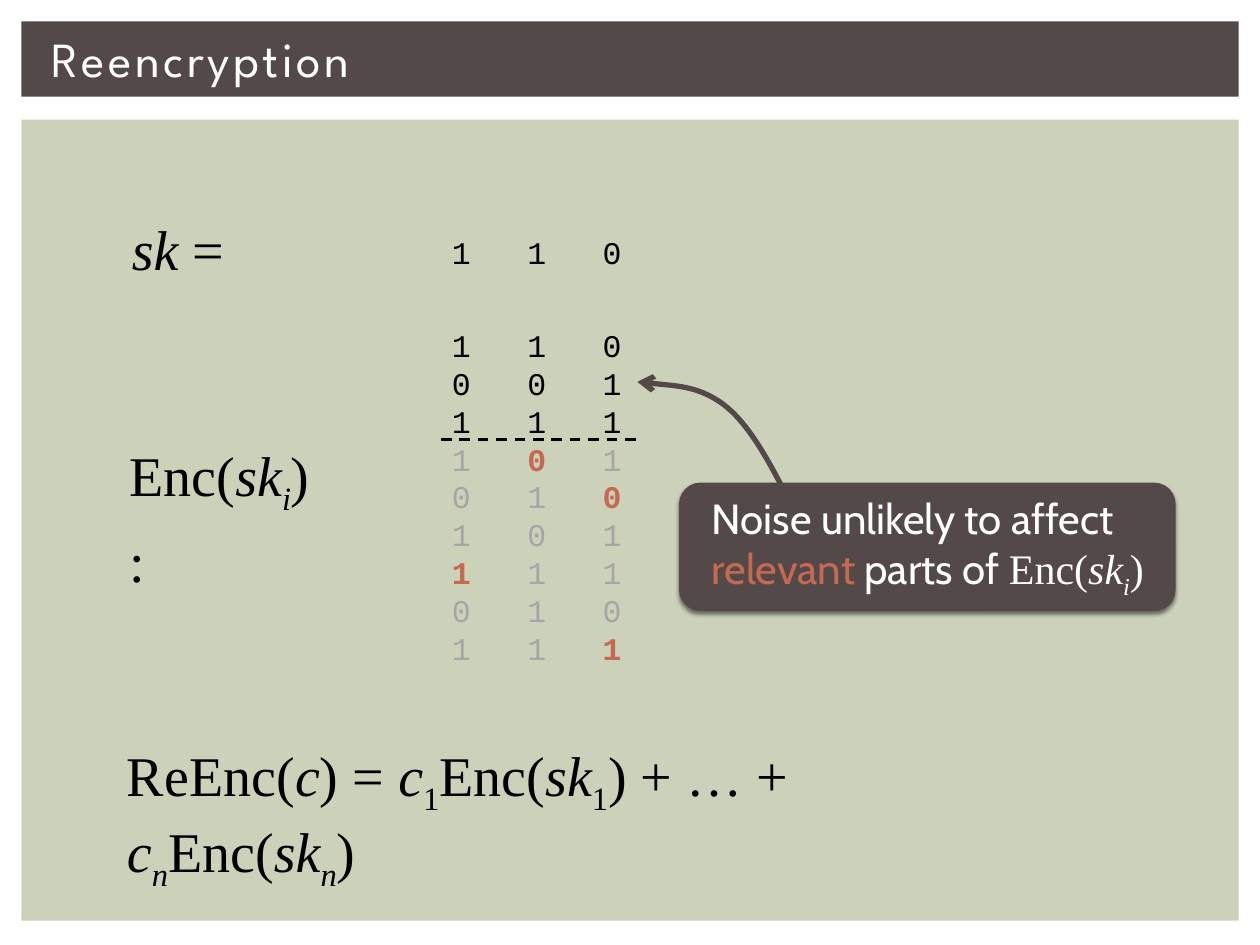
from lxml import etree
from pptx import Presentation
from pptx.dml.color import RGBColor
from pptx.enum.dml import MSO_LINE
from pptx.enum.shapes import MSO_CONNECTOR, MSO_SHAPE
from pptx.enum.text import MSO_ANCHOR
from pptx.oxml import parse_xml
from pptx.oxml.ns import nsdecls, qn
from pptx.util import Cm, Pt

RECTANGLE, ROUNDED = MSO_SHAPE.RECTANGLE, MSO_SHAPE.ROUNDED_RECTANGLE
MIDDLE, TOP = MSO_ANCHOR.MIDDLE, MSO_ANCHOR.TOP
STRAIGHT, DASH = MSO_CONNECTOR.STRAIGHT, MSO_LINE.DASH

BROWN, SAGE, RUST = "534949", "CCD1B9", "C66951"
BLACK, WHITE, GRAY = "000000", "FFFFFF", "A6A6A6"

# Text formats
TITLE = {"name": "League Spartan", "size": Pt(28), "color": WHITE}
MATH = {"name": "Times New Roman", "size": Pt(32), "color": BLACK}
BITS = {"name": "Courier New", "size": Pt(18), "color": BLACK}
NOTE = {"name": "Cabin", "size": Pt(24), "color": WHITE}
NOTE_MATH = {"name": "Times New Roman"}
ITALIC = {"italic": True}
SUB = {"baseline": -25000}
ITALIC_SUB = ITALIC | SUB
RELEVANT = {"color": RUST, "bold": True}

# Content: a paragraph is a list of (text, format) spans
SECRET_KEY = [("sk ", ITALIC), ("=", {})]
ENCRYPTED_KEY = [("Enc(", {}), ("sk", ITALIC), ("i", ITALIC_SUB), ("):", {})]
REENCRYPTION = [
    ("ReEnc(", {}), ("c", ITALIC), (") = ", {}),
    ("c", ITALIC), ("1", SUB), ("Enc(", {}), ("sk", ITALIC), ("1", SUB),
    (") + … + ", {}),
    ("c", ITALIC), ("n", ITALIC_SUB), ("Enc(", {}), ("sk", ITALIC),
    ("n", ITALIC_SUB), (")", {}),
]
NOTE_LINES = [
    [("Noise unlikely to affect", {})],
    [("relevant", {"color": RUST}), (" parts of ", {}), ("Enc(", NOTE_MATH),
     ("sk", NOTE_MATH | ITALIC), ("i", NOTE_MATH | ITALIC_SUB), (")", NOTE_MATH)],
]
KEY_BITS = ["1 1 0"]
# A star marks a relevant bit
CLEAR_ROWS = ["1 1 0", "0 0 1", "1 1 1"]
NOISY_ROWS = ["1 0* 1", "0 1 0*", "1 0 1", "1* 1 1", "0 1 0", "1 1 1*"]

BIT_STEP = 1.52
MATH_PITCH, BIT_PITCH = Pt(43.6), Pt(21.6)
# Start point, then control and end points of two cubic curves
ARROW = [(15.8, 9.88), (15.44, 9.19), (15.06, 8.51), (14.58, 8.15),
         (14.07, 7.77), (12.85, 7.7), (12.85, 7.7)]


def rgb(value):
    return RGBColor.from_string(value)


def add_panel(page, kind, place, color):
    panel = page.shapes.add_shape(kind, *map(Cm, place))
    panel.shadow.inherit = False
    panel.fill.solid()
    panel.fill.fore_color.rgb = rgb(color)
    panel.line.fill.background()
    return panel


def add_span(para, text, style):
    span = para.add_run()
    span.text = text
    for name, value in style.items():
        if name == "color":
            span.font.color.rgb = rgb(value)
        elif name in ("baseline", "spc"):
            span.font._element.set(name, str(value))
        else:
            setattr(span.font, name, value)


def add_text(page, place, lines, base, wrap=True, anchor=TOP, pitch=None):
    box = page.shapes.add_textbox(*map(Cm, place))
    frame = box.text_frame
    frame.word_wrap = wrap
    frame.vertical_anchor = anchor
    for index, spans in enumerate(lines):
        para = frame.paragraphs[0] if index == 0 else frame.add_paragraph()
        if pitch:
            para.line_spacing = pitch
        for text, style in spans:
            add_span(para, text, base | style)
    return box


def bit_spans(row, color):
    return [("\t" * (column > 0) + bit.rstrip("*"),
             RELEVANT if bit.endswith("*") else {"color": color})
            for column, bit in enumerate(row.split())]


def add_bits(page, place, lines):
    """Add rows of bits with one tab stop per column."""
    box = add_text(page, place, lines, BITS, pitch=BIT_PITCH)
    for para in box.text_frame.paragraphs:
        tabs = etree.SubElement(para._p.get_or_add_pPr(), qn("a:tabLst"))
        for column in (1, 2):
            etree.SubElement(tabs, qn("a:tab"), algn="l",
                             pos=str(Cm(BIT_STEP * column)))


def add_soft_shadow(shape):
    effects = shape._element.spPr.find(qn("a:effectLst"))
    effects.append(parse_xml(
        f'<a:outerShdw {nsdecls("a")} blurRad="{Pt(2.5)}" dist="{Pt(2)}" '
        'dir="5400000" algn="ctr" rotWithShape="0"><a:srgbClr val="000000">'
        '<a:alpha val="50000"/></a:srgbClr></a:outerShdw>'))


def add_curved_arrow(page, points):
    start, *rest = [(Cm(x), Cm(y)) for x, y in points]
    builder = page.shapes.build_freeform(*start)
    builder.add_line_segments(rest, close=False)
    arrow = builder.convert_to_shape()
    arrow.shadow.inherit = False
    arrow.fill.background()
    arrow.line.color.rgb = rgb(BROWN)
    arrow.line.width = Pt(3)
    # Join every three straight segments into one cubic curve
    segments = list(arrow._element.iter(qn("a:lnTo")))
    for first in range(0, len(segments), 3):
        curve = etree.SubElement(segments[first].getparent(), qn("a:cubicBezTo"))
        for segment in segments[first:first + 3]:
            curve.append(segment[0])
            segment.getparent().remove(segment)
    etree.SubElement(arrow.line._get_or_add_ln(), qn("a:tailEnd"), type="arrow")


def add_divider(page, left, right, y):
    divider = page.shapes.add_connector(STRAIGHT, Cm(left), Cm(y), Cm(right), Cm(y))
    divider.line.color.rgb = rgb(BLACK)
    divider.line.width = Pt(1.5)
    divider.line.dash_style = DASH
    etree.SubElement(divider._element.spPr, qn("a:effectLst"))


def main():
    deck = Presentation()
    deck.slide_width, deck.slide_height = Cm(25.4), Cm(19.05)
    page = deck.slides.add_slide(deck.slide_layouts[6])

    add_panel(page, RECTANGLE, (0.43, 2.41, 24.54, 16.15), SAGE)
    add_panel(page, RECTANGLE, (0.43, 0.43, 24.54, 1.52), BROWN)
    add_text(page, (0.79, 0.41, 23.88, 1.5), [[("Reencryption", {"spc": 200})]],
             TITLE, anchor=MIDDLE)

    for place, spans in [((2.41, 4.01, 2.54, 1.63), SECRET_KEY),
                         ((2.36, 8.76, 4.3, 1.63), ENCRYPTED_KEY),
                         ((2.31, 14.81, 18.52, 1.63), REENCRYPTION)]:
        add_text(page, place, [spans], MATH, pitch=MATH_PITCH)

    add_bits(page, (8.86, 4.57, 4.04, 1.02),
             [bit_spans(row, BLACK) for row in KEY_BITS])
    add_bits(page, (8.86, 6.45, 4.45, 7.19),
             [bit_spans(row, BLACK) for row in CLEAR_ROWS]
             + [bit_spans(row, GRAY) for row in NOISY_ROWS])
    add_divider(page, 8.89, 12.9, 8.86)

    callout = add_panel(page, ROUNDED, (13.69, 9.73, 10.01, 2.59), BROWN)
    add_soft_shadow(callout)
    add_text(page, (14.1, 9.8, 9.4, 2.31), NOTE_LINES, NOTE, wrap=False)
    add_curved_arrow(page, ARROW)

    deck.save("out.pptx")


if __name__ == "__main__":
    main()
